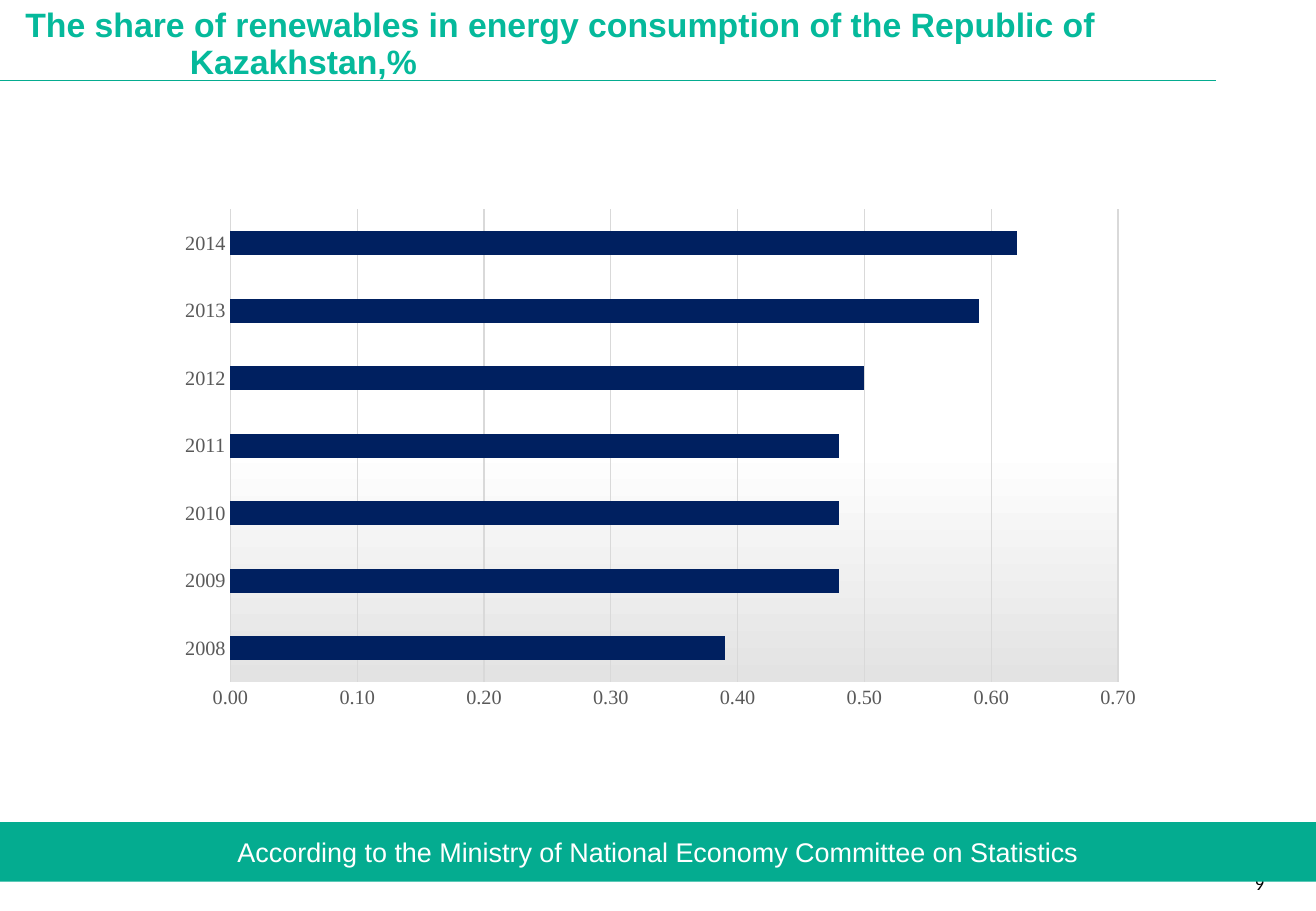
from lxml import etree
from pptx import Presentation
from pptx import util as u
from pptx.chart import data
from pptx.dml import color
from pptx.enum import chart as ch, shapes, text
from pptx.oxml import ns, parse_xml

GREEN = "04AC90"
GRID = "D9D9D9"
SHARES = {"2008": 0.39, "2009": 0.48, "2010": 0.48, "2011": 0.48,
          "2012": 0.5, "2013": 0.59, "2014": 0.62}
PLOT_STOPS = [(0, "FFFFFF"), (50, "FFFFFF"), (100, "E3E3E3")]


def rgb(value):
    return color.RGBColor.from_string(value)


def set_font(font, name, size, hex_color, bold=False):
    font.name = name
    font.size = u.Pt(size)
    font.bold = bold
    font.color.rgb = rgb(hex_color)


def set_line(line, hex_color, width=0.75):
    line.color.rgb = rgb(hex_color)
    line.width = u.Pt(width)


def write(sp, content, font, anchor, inset=0, wrap=True):
    tf = sp.text_frame
    tf.word_wrap = wrap
    tf.vertical_anchor = anchor
    tf.margin_left = tf.margin_right = u.Pt(inset)
    tf.margin_top = tf.margin_bottom = u.Pt(inset / 2)
    p = tf.paragraphs[0]
    p.text = content
    set_font(p.font, *font)
    return p


def add_title(s, x, y, w, h):
    sp = s.shapes.add_textbox(u.Pt(x), u.Pt(y), u.Pt(w), u.Pt(h))
    p = write(sp, "The share of renewables in energy consumption of the Republic of\vKazakhstan,%",
              ("Arial", 20, "05B99B", True), text.MSO_ANCHOR.BOTTOM)
    p.line_spacing = 0.9
    pPr = p._p.get_or_add_pPr()
    pPr.set("marL", str(u.Pt(97.5)))
    pPr.set("indent", str(-u.Pt(97.5)))
    rule = s.shapes.add_connector(shapes.MSO_CONNECTOR.STRAIGHT, 0, u.Pt(y + h - 0.6),
                                  u.Pt(w), u.Pt(y + h - 0.6))
    set_line(rule.line, GREEN)
    etree.SubElement(rule._element.spPr, ns.qn("a:effectLst"))


def add_page_number(s, x, y, w, h):
    sp = s.shapes.add_textbox(u.Pt(x), u.Pt(y), u.Pt(w), u.Pt(h))
    write(sp, "9", ("Calibri", 11, "000000"), text.MSO_ANCHOR.TOP, wrap=False)


def add_source_banner(s, x, y, w, h):
    sp = s.shapes.add_shape(shapes.MSO_SHAPE.RECTANGLE, u.Pt(x), u.Pt(y), u.Pt(w), u.Pt(h))
    sp.shadow.inherit = False
    sp.fill.solid()
    sp.fill.fore_color.rgb = rgb(GREEN)
    sp.line.fill.background()
    p = write(sp, "According to the Ministry of National Economy Committee on Statistics",
              ("Arial", 16, "FFFFFF"), text.MSO_ANCHOR.MIDDLE, inset=7.2, wrap=False)
    p.alignment = text.PP_ALIGN.CENTER


def fill_plot_area(chart):
    stops = "".join(f'<a:gs pos="{pos * 1000}"><a:srgbClr val="{value}"/></a:gs>'
                    for pos, value in PLOT_STOPS)
    chart._chartSpace.chart.plotArea.append(parse_xml(
        f'<c:spPr {ns.nsdecls("c", "a")}><a:gradFill><a:gsLst>{stops}</a:gsLst>'
        '<a:lin ang="5400000" scaled="0"/></a:gradFill><a:ln><a:noFill/></a:ln></c:spPr>'))


def add_share_chart(s, x, y, w, h):
    cd = data.CategoryChartData(number_format="0.00")
    cd.categories = list(SHARES)
    cd.add_series("Series 1", list(SHARES.values()))
    chart = s.shapes.add_chart(ch.XL_CHART_TYPE.BAR_CLUSTERED, u.Pt(x), u.Pt(y),
                               u.Pt(w), u.Pt(h), cd).chart
    chart.has_legend = False
    chart.has_title = False
    set_font(chart.font, "Times New Roman", 12, "000000")

    plot = chart.plots[0]
    plot.gap_width = 182
    plot.vary_by_categories = False
    bars = plot.series[0].format
    bars.fill.solid()
    bars.fill.fore_color.rgb = rgb("002060")

    years, values = chart.category_axis, chart.value_axis
    for axis in (years, values):
        axis.major_tick_mark = axis.minor_tick_mark = ch.XL_TICK_MARK.NONE
        set_font(axis.tick_labels.font, "Times New Roman", 12, "595959")
    set_line(years.format.line, GRID)
    values.format.line.fill.background()
    values.minimum_scale, values.maximum_scale, values.major_unit = 0, 0.7, 0.1
    values.has_major_gridlines = True
    set_line(values.major_gridlines.format.line, GRID)
    values.tick_labels.number_format = "0.00;[Red]0.00"
    values.tick_labels.number_format_is_linked = False
    fill_plot_area(chart)


def main():
    prs = Presentation()
    prs.slide_width, prs.slide_height = u.Pt(780), u.Pt(540)
    s = prs.slides.add_slide(prs.slide_layouts[6])
    add_title(s, 15, 4.3, 721, 44)
    add_page_number(s, 743.8, 517, 17.3, 12.2)
    add_source_banner(s, 0, 487.4, 780, 35.3)
    add_share_chart(s, 98, 118, 587, 308)
    prs.save("out.pptx")


if __name__ == "__main__":
    main()
